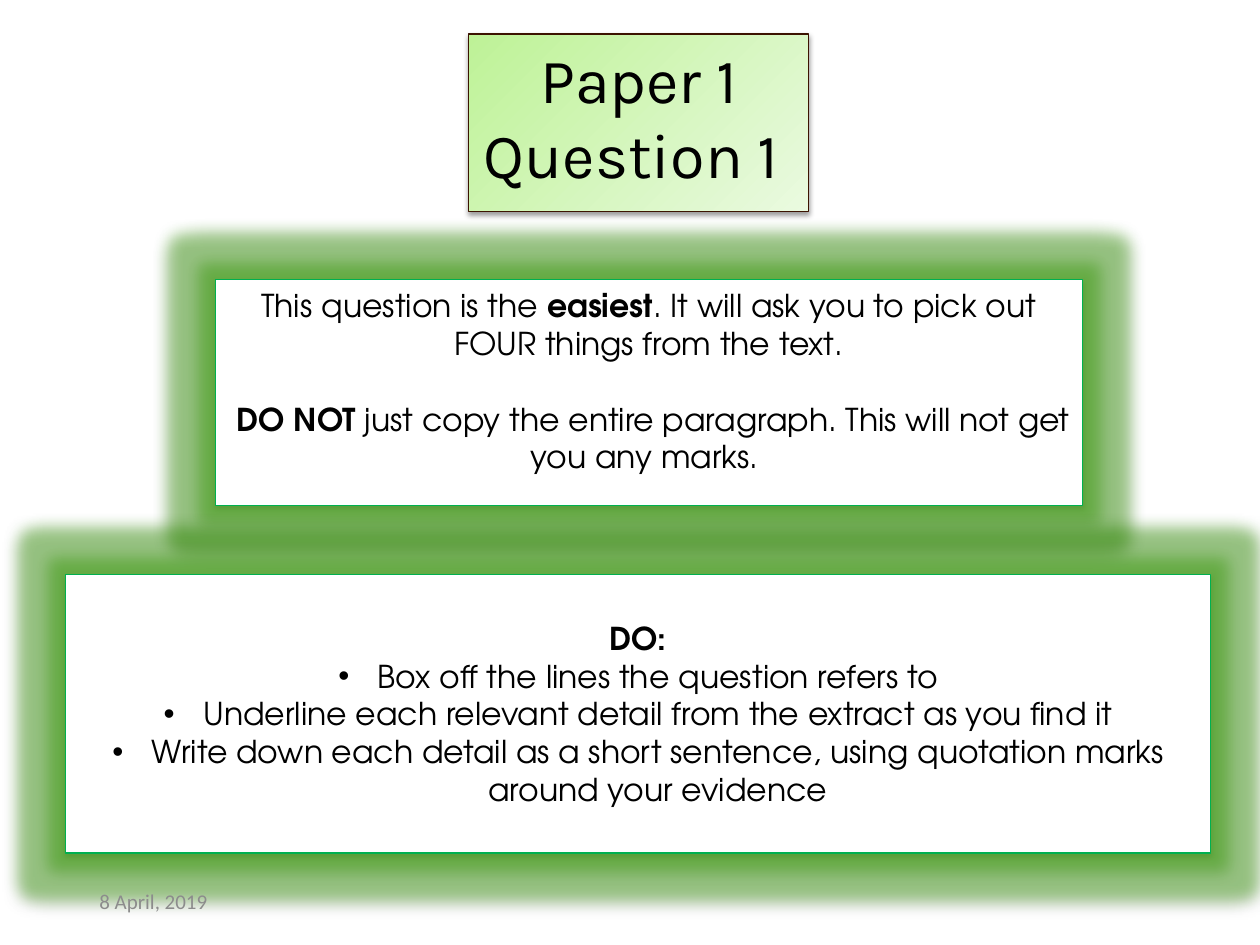
"""Builds the Paper 1 Question 1 advice slide."""
from dataclasses import dataclass

from lxml.etree import SubElement
from pptx import Presentation
from pptx.dml.color import RGBColor
from pptx.enum.shapes import MSO_SHAPE
from pptx.enum.text import MSO_ANCHOR, PP_ALIGN
from pptx.oxml.ns import qn
from pptx.util import Pt


@dataclass(frozen=True)
class Theme:
    ink: str = "000000"
    grey: str = "8C8C8C"
    paper: str = "FFFFFF"
    green: str = "00B050"
    brown: str = "3C1301"
    glow: str = "34A000"
    fade: tuple = ("BEF297", "EAFAE0")
    head: tuple = ("Karla", 36)
    body: tuple = ("TeX Gyre Adventor", 18)
    date: tuple = ("Calibri", 12)
    gap: float = 21.7
    indent: float = 22.5


@dataclass(frozen=True)
class Para:
    runs: tuple
    before: float = 0
    bullet: bool = False


@dataclass(frozen=True)
class Panel:
    area: tuple
    paras: tuple
    font: tuple
    edge: str
    glow: bool = True
    top: float = 3.6


THEME = Theme()
PANELS = (
    Panel((267.84, 19.44, 194.4, 101.52),
          (Para(("Paper 1",)), Para(("Question 1 ",))),
          THEME.head, THEME.brown, glow=False),
    Panel((123.12, 159.84, 495.36, 128.88),
          (Para(("This question is the ", "easiest",
                 ". It will ask you to pick out FOUR things from the text.")),
           Para((" ", "DO NOT ", "just copy the entire paragraph. "
                 "This will not get you any marks. "), before=THEME.gap)),
          THEME.body, THEME.green),
    Panel((37.44, 328.32, 654.48, 159.12),
          (Para((" ", "DO: ")),
           *(Para((text,), bullet=True) for text in (
               "Box off the lines the question refers to",
               "Underline each relevant detail from the extract as you find it",
               "Write down each detail as a short sentence, "
               "using quotation marks around your evidence"))),
          THEME.body, THEME.green, top=3.6 + THEME.gap),
)


def apply(target, values: dict) -> None:
    """Set each named value on the target."""
    for name, value in values.items():
        setattr(target, name, value)


def tint(parent, color: str, alpha: int) -> None:
    """Add a colour with an opacity in percent."""
    node = SubElement(parent, qn("a:srgbClr"), val=color)
    SubElement(node, qn("a:alpha"), val=str(alpha * 1000))


def effect(shape, glow: bool) -> None:
    """Give the shape its soft shadow and, if asked, a glow."""
    shape.shadow.inherit = False
    group = shape._element.spPr.find(qn("a:effectLst"))
    if glow:
        tint(SubElement(group, qn("a:glow"), rad=str(Pt(18))), THEME.glow, 40)
    cast = SubElement(group, qn("a:outerShdw"), blurRad=str(Pt(3.1)),
                      dist=str(Pt(1.6)), dir="5400000", rotWithShape="0")
    tint(cast, THEME.ink, 38)


def paint(shape, glow: bool) -> None:
    """Fill a glowing panel plainly and the heading with a gradient."""
    if glow:
        shape.fill.solid()
        shape.fill.fore_color.rgb = RGBColor.from_string(THEME.paper)
        return
    shape.fill.gradient()
    shape.fill.gradient_angle = 315
    for place, (stop, color) in enumerate(
            zip(shape.fill.gradient_stops, THEME.fade)):
        stop.position = place
        stop.color.rgb = RGBColor.from_string(color)


def mark(para) -> None:
    """Turn a paragraph into a bullet with a hanging indent."""
    props = para._p.get_or_add_pPr()
    props.set("marL", str(Pt(THEME.indent)))
    props.set("indent", str(-Pt(THEME.indent)))
    SubElement(props, qn("a:buFont"), typeface="Arial")
    SubElement(props, qn("a:buChar"), char="•")


def write(frame, paras: tuple, font: tuple, color: str, align) -> None:
    """Write paragraphs whose every second run is bold."""
    for place, item in enumerate(paras):
        para = frame.add_paragraph() if place else frame.paragraphs[0]
        if item.bullet:
            mark(para)
        apply(para, {"alignment": align})
        if item.before:
            para.space_before = Pt(item.before)
        for turn, text in enumerate(item.runs):
            run = para.add_run()
            run.text = text
            apply(run.font, {"name": font[0], "size": Pt(font[1]),
                             "bold": turn % 2 == 1})
            run.font.color.rgb = RGBColor.from_string(color)


def draw(slide, panel: Panel) -> None:
    """Draw one panel with its text."""
    shape = slide.shapes.add_shape(MSO_SHAPE.RECTANGLE, *map(Pt, panel.area))
    paint(shape, panel.glow)
    shape.line.color.rgb = RGBColor.from_string(panel.edge)
    shape.line.width = Pt(0.75)
    effect(shape, panel.glow)
    frame = shape.text_frame
    apply(frame, {"word_wrap": True, "vertical_anchor": MSO_ANCHOR.TOP,
                  "margin_left": Pt(7), "margin_right": Pt(7),
                  "margin_top": Pt(panel.top)})
    write(frame, panel.paras, panel.font, THEME.ink, PP_ALIGN.CENTER)


def main() -> None:
    """Build and save the slide."""
    deck = Presentation()
    apply(deck, {"slide_width": Pt(720), "slide_height": Pt(540)})
    slide = deck.slides.add_slide(deck.slide_layouts[6])
    for panel in PANELS:
        draw(slide, panel)
    frame = slide.shapes.add_textbox(
        Pt(49.68), Pt(500.4), Pt(162), Pt(28.8)).text_frame
    apply(frame, {"word_wrap": True, "vertical_anchor": MSO_ANCHOR.MIDDLE})
    write(frame, (Para(("8 April, 2019",)),), THEME.date, THEME.grey,
          PP_ALIGN.LEFT)
    deck.save("out.pptx")


if __name__ == "__main__":
    main()
